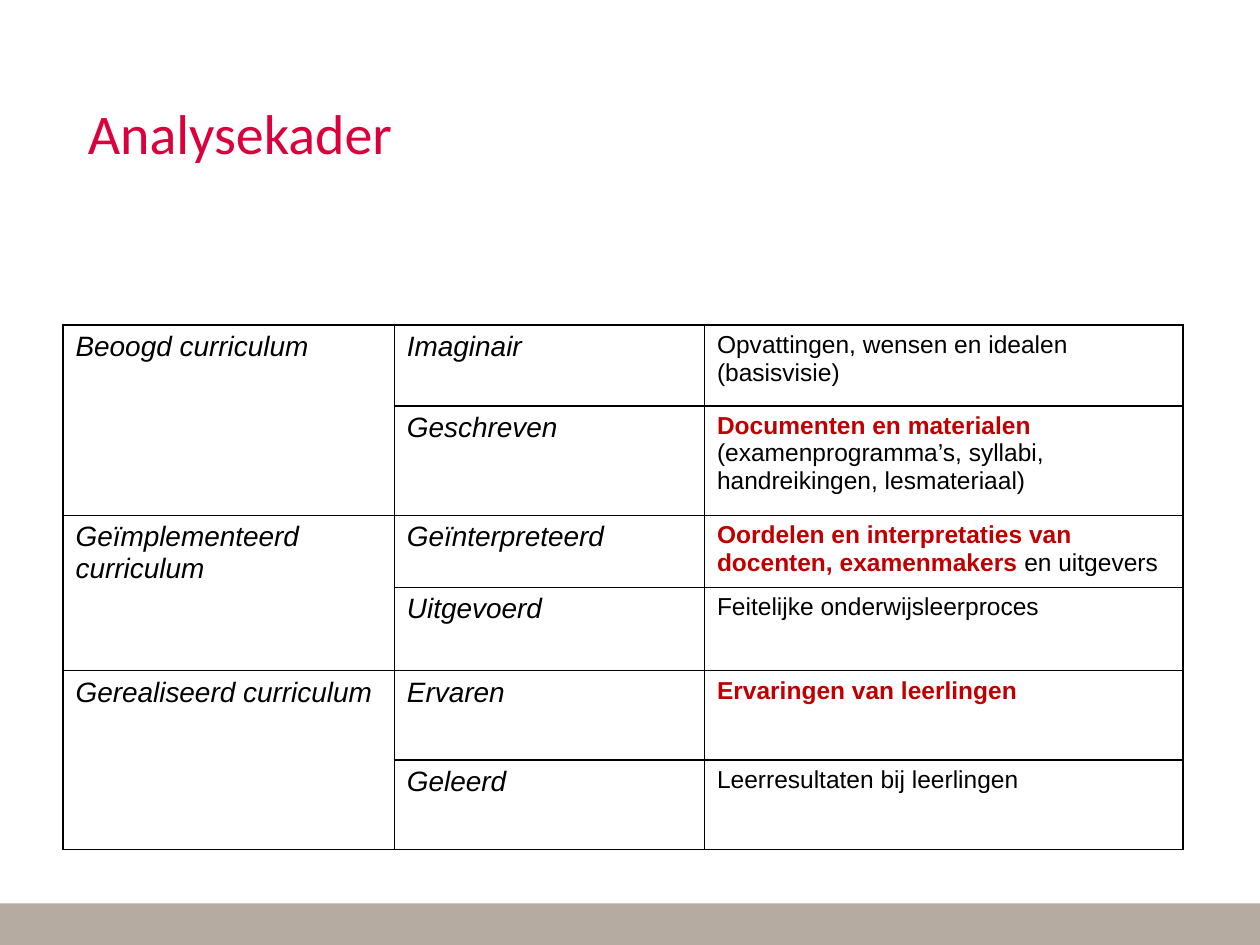
from typing import NamedTuple

from lxml.etree import SubElement
from pptx import Presentation
from pptx.dml.color import RGBColor
from pptx.enum.shapes import MSO_SHAPE
from pptx.enum.text import MSO_ANCHOR, PP_ALIGN
from pptx.oxml.ns import qn
from pptx.util import Cm, Pt

BLACK = RGBColor(0x00, 0x00, 0x00)
RED = RGBColor(0xC0, 0x00, 0x00)
CRIMSON = RGBColor(0xDB, 0x00, 0x3B)
TAUPE = RGBColor(0xB5, 0xAB, 0xA1)

LEVEL = {"name": "Arial", "size": Pt(16), "italic": True}
PLAIN = {"name": "Arial", "size": Pt(14)}
STRONG = {**PLAIN, "bold": True}
COLUMN_WIDTHS = [6.68, 6.25, 9.65]


class Level(NamedTuple):
    name: str
    emphasis: str
    description: str
    height: float


class Curriculum(NamedTuple):
    name: str
    levels: list[Level]


CURRICULA = [
    Curriculum("Beoogd curriculum", [
        Level("Imaginair", "", "Opvattingen, wensen en idealen (basisvisie)", 1.63),
        Level("Geschreven", "Documenten en materialen ",
              "(examenprogramma’s, syllabi, handreikingen, lesmateriaal)", 2.21),
    ]),
    Curriculum("Geïmplementeerd curriculum", [
        Level("Geïnterpreteerd",
              "Oordelen en interpretaties van docenten, examenmakers ",
              "en uitgevers", 1.45),
        Level("Uitgevoerd", "", "Feitelijke onderwijsleerproces", 1.68),
    ]),
    Curriculum("Gerealiseerd curriculum", [
        Level("Ervaren", "Ervaringen van leerlingen", "", 1.8),
        Level("Geleerd", "", "Leerresultaten bij leerlingen", 1.8),
    ]),
]


def add_run(p, text: str, style: dict, color: RGBColor) -> None:
    r = p.add_run()
    r.text = text
    for key, value in style.items():
        setattr(r.font, key, value)
    r.font.color.rgb = color


def outline_cell(cell) -> None:
    """Give the cell black 1 pt borders and no fill."""
    tc_pr = cell._tc.get_or_add_tcPr()
    for side in ("lnL", "lnR", "lnT", "lnB"):
        ln = SubElement(tc_pr, qn(f"a:{side}"), w=str(Pt(1)))
        SubElement(SubElement(ln, qn("a:solidFill")), qn("a:srgbClr"), val=str(BLACK))
    cell.fill.background()


def add_footer_band(s, width: int) -> None:
    band = s.shapes.add_shape(MSO_SHAPE.RECTANGLE, 0, Cm(18.21), width, Cm(0.84))
    band.shadow.inherit = False
    band.fill.solid()
    band.fill.fore_color.rgb = TAUPE
    band.line.fill.background()


def set_title(s, text: str) -> None:
    title = s.shapes.title
    title.left, title.top, title.width, title.height = Cm(1.27), Cm(1.85), Cm(22.86), Cm(3.18)
    tf = title.text_frame
    tf.vertical_anchor = MSO_ANCHOR.TOP
    tf.margin_left = Cm(0.5)
    p = tf.paragraphs[0]
    p.alignment = PP_ALIGN.LEFT
    add_run(p, text, {"name": "Calibri", "size": Pt(32)}, CRIMSON)


def add_framework(s, curricula: list[Curriculum]) -> None:
    levels = [level for c in curricula for level in c.levels]
    table = s.shapes.add_table(
        len(levels), len(COLUMN_WIDTHS), Cm(1.27), Cm(6.55),
        Cm(sum(COLUMN_WIDTHS)), Cm(sum(level.height for level in levels))).table
    table.first_row = table.horz_banding = False
    for column, width in zip(table.columns, COLUMN_WIDTHS):
        column.width = Cm(width)
    for cell in table.iter_cells():
        outline_cell(cell)

    for i, level in enumerate(levels):
        table.rows[i].height = Cm(level.height)
        add_run(table.cell(i, 1).text_frame.paragraphs[0], level.name, LEVEL, BLACK)
        p = table.cell(i, 2).text_frame.paragraphs[0]
        if level.emphasis:
            add_run(p, level.emphasis, STRONG, RED)
        if level.description:
            add_run(p, level.description, PLAIN, BLACK)

    row = 0
    for curriculum in curricula:
        last = row + len(curriculum.levels) - 1
        cell = table.cell(row, 0)
        cell.merge(table.cell(last, 0))
        add_run(cell.text_frame.paragraphs[0], curriculum.name, LEVEL, BLACK)
        row = last + 1


def main() -> None:
    prs = Presentation()
    prs.slide_width, prs.slide_height = Cm(25.4), Cm(19.05)
    s = prs.slides.add_slide(prs.slide_layouts[5])
    add_footer_band(s, prs.slide_width)
    set_title(s, "Analysekader")
    add_framework(s, CURRICULA)
    prs.save("out.pptx")


if __name__ == "__main__":
    main()
